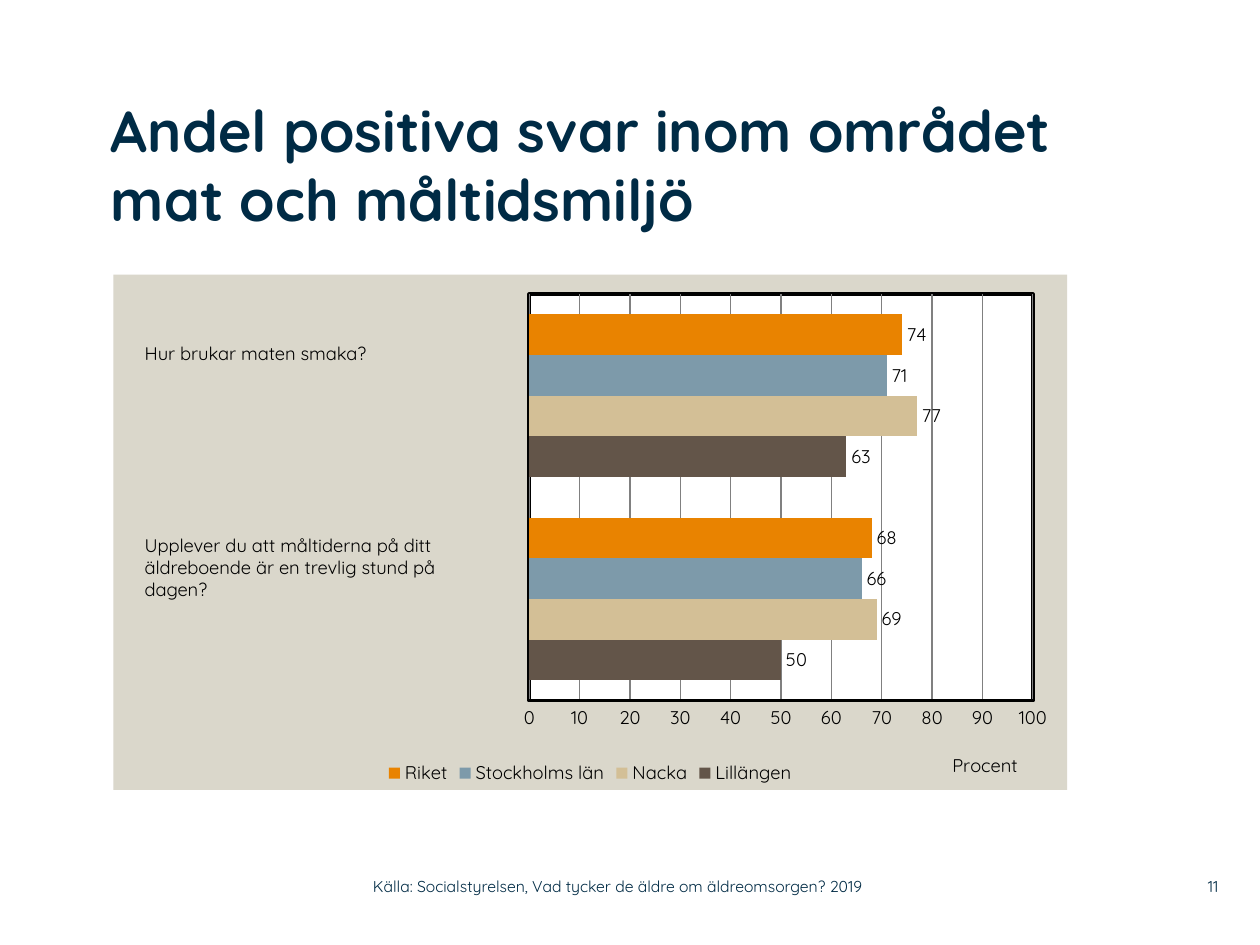
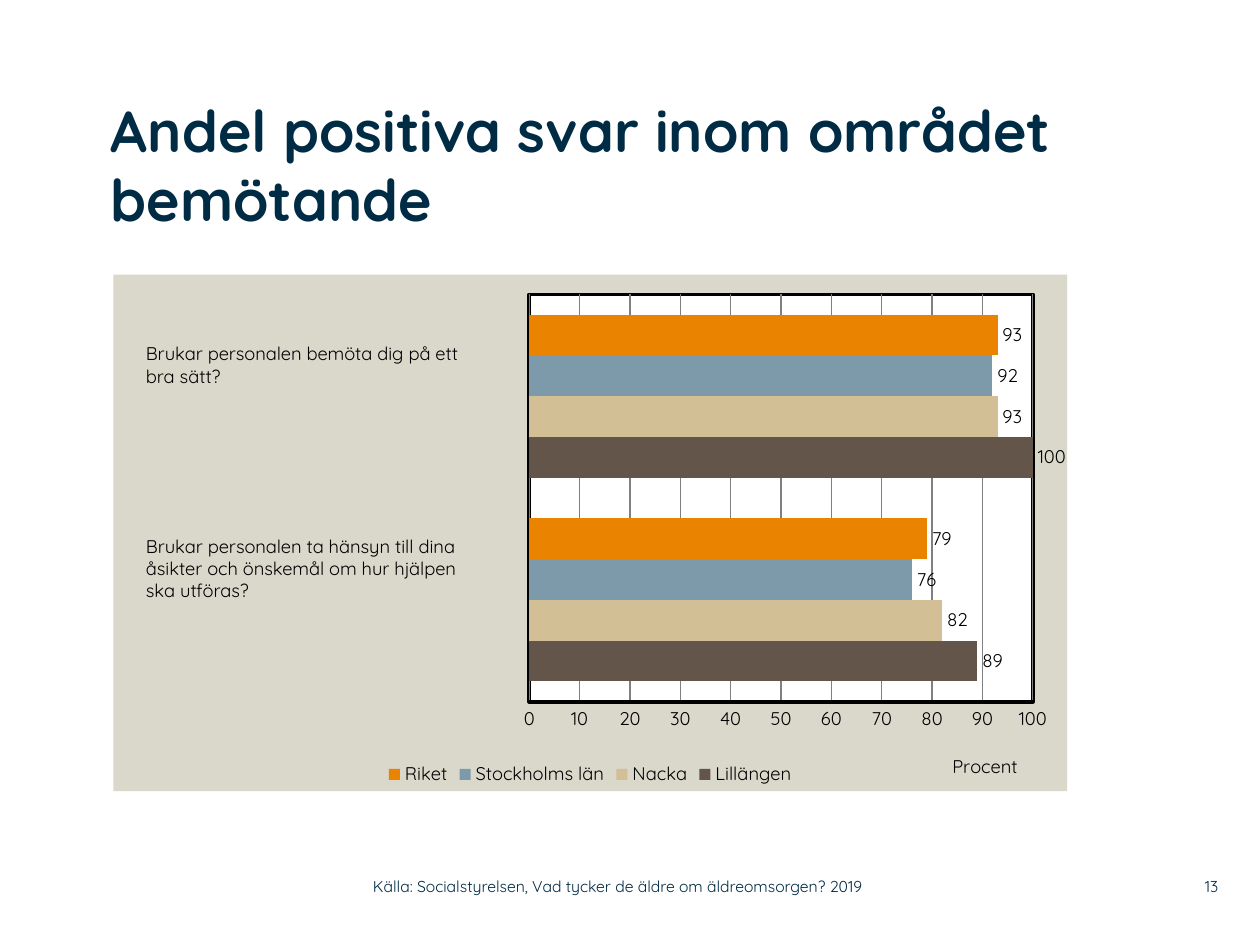
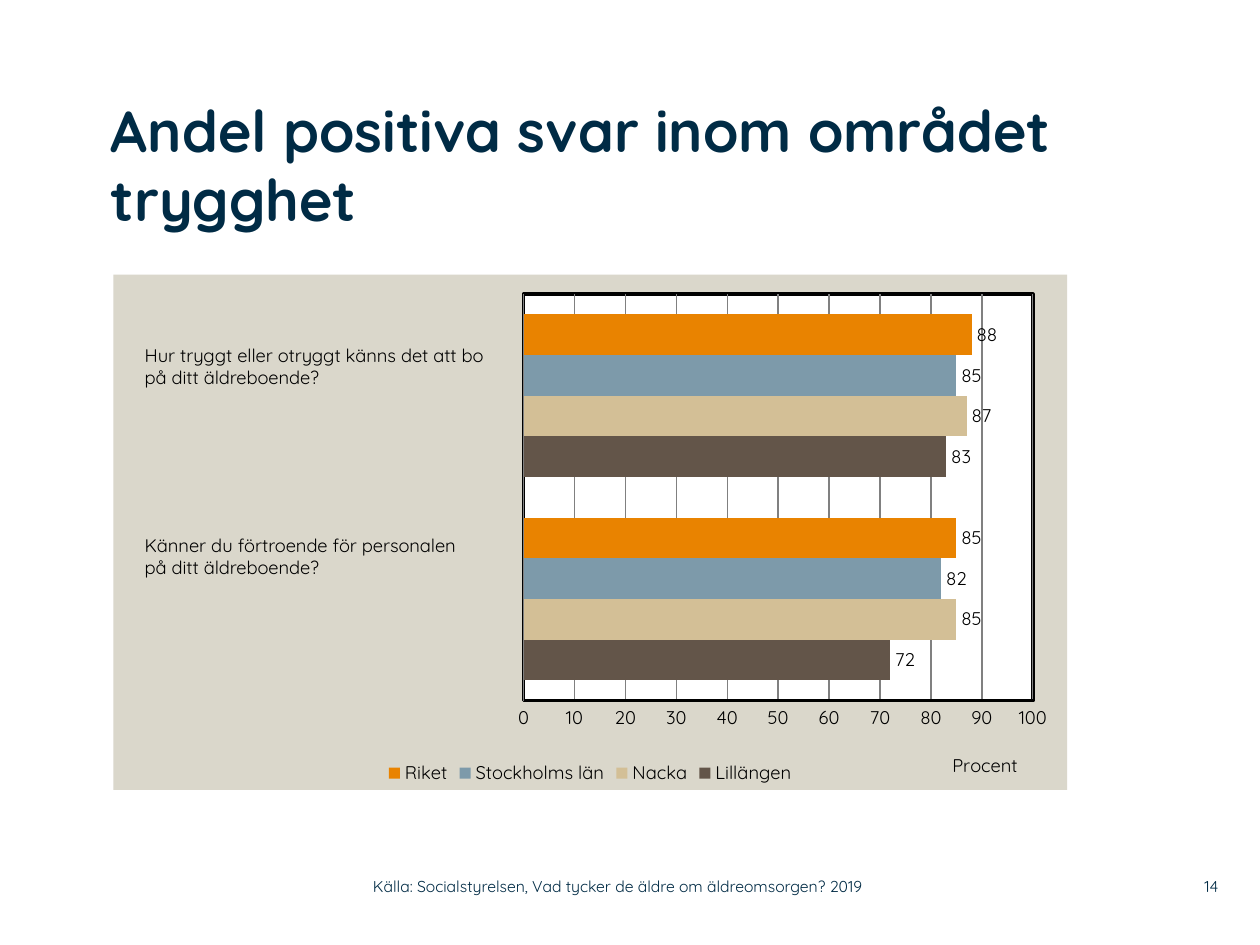
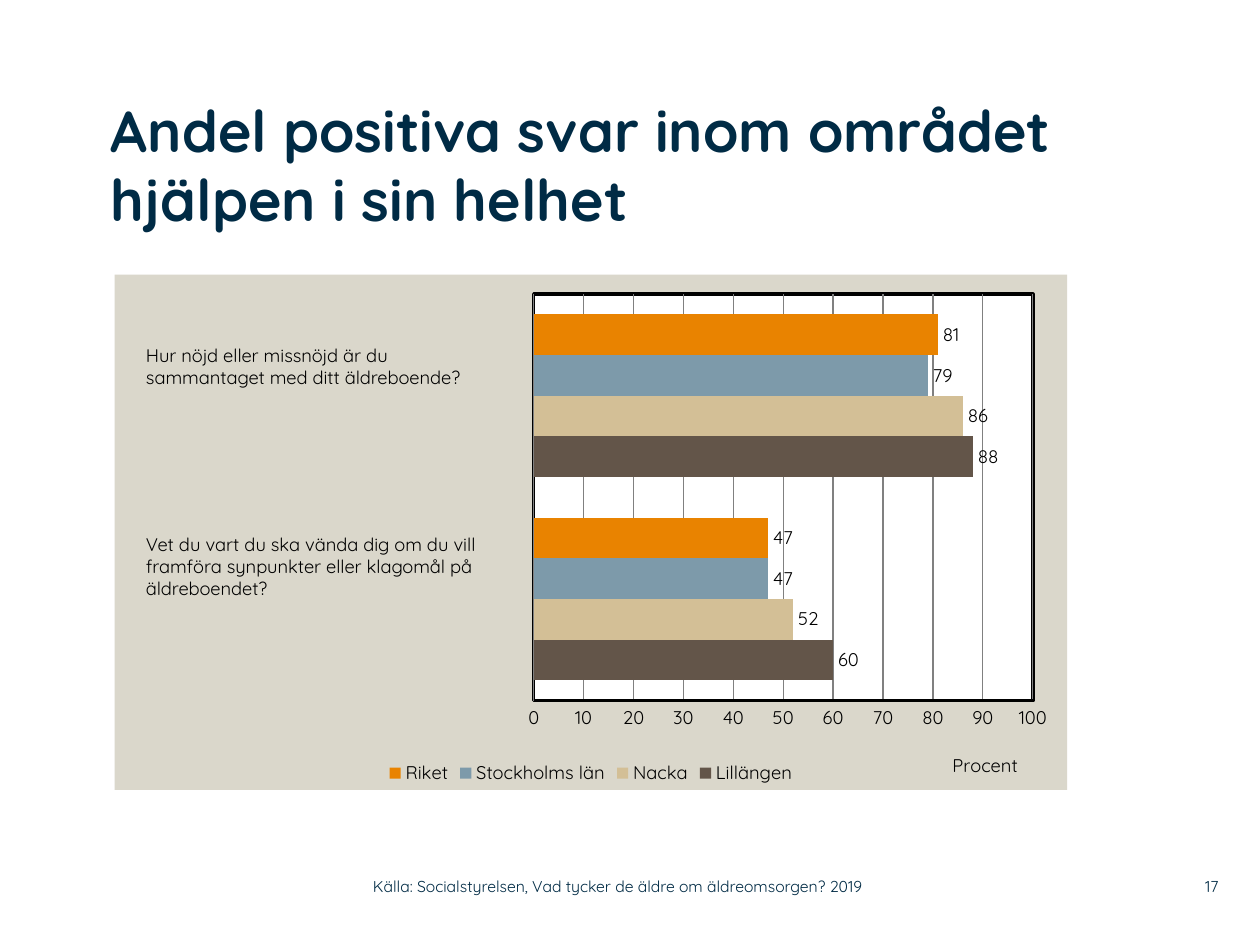
from dataclasses import dataclass

from lxml import etree
from pptx import Presentation
from pptx import util as u
from pptx.chart import data as chart_data
from pptx.dml import color
from pptx.enum import chart as charts
from pptx.enum import text
from pptx.oxml import ns

# Shared look
PX = 9144  # 100 px to the inch
FONT = "Quicksand"
NAVY, BLACK, WHITE, GREY, PANEL = "002B45", "000000", "FFFFFF", "808080", "DAD7CB"
SOURCE = "Källa: Socialstyrelsen, Vad tycker de äldre om äldreomsorgen? 2019"
TITLE_START = "Andel positiva svar inom området "
SERIES = {
    "Lillängen": "635549",
    "Nacka": "D3BF96",
    "Stockholms län": "7D9AAA",
    "Riket": "E98300",
}
TITLE_FONT = {"name": FONT, "size": u.Pt(33), "bold": True}
BODY_FONT = {"name": FONT, "size": u.Pt(10.5), "bold": False}
FOOTER_FONT = {"name": FONT, "size": u.Pt(9), "bold": False}
TITLE_FRAME = {"auto_size": text.MSO_AUTO_SIZE.NONE}
QUESTION_FRAME = {"auto_size": text.MSO_AUTO_SIZE.SHAPE_TO_FIT_TEXT}
FOOTER_FRAME = {"vertical_anchor": text.MSO_ANCHOR.MIDDLE}
NO_MARGINS = dict.fromkeys(
    ("margin_left", "margin_top", "margin_right", "margin_bottom"), 0)


@dataclass
class Area:
    left: int
    top: int
    width: int
    height: int

    def emu(self) -> list[int]:
        return [side * PX for side in (self.left, self.top, self.width, self.height)]


@dataclass
class Question:
    area: Area
    lines: list[str]


@dataclass
class Survey:
    subject: str
    number: int
    title_width: int
    chart_area: Area
    plot_left: float
    plot_width: float
    questions: list[Question]
    values: list[tuple[int, int]]  # one pair per series, lower group first


SURVEYS = [
    Survey("mat och måltidsmiljö", 11, 842, Area(90, 218, 757, 409), 0.436, 0.528,
           [Question(Area(105, 267, 297, 28), ["Hur brukar maten smaka?"]),
            Question(Area(105, 419, 293, 63), [
                "Upplever du att måltiderna på ditt äldreboende är en trevlig stund på",
                "dagen?"])],
           [(50, 63), (69, 77), (66, 71), (68, 74)]),
    Survey("bemötande", 13, 760, Area(90, 218, 757, 410), 0.436, 0.528,
           [Question(Area(106, 267, 297, 45), [
               "Brukar personalen bemöta dig på ett", "bra sätt?"]),
            Question(Area(106, 420, 299, 63), [
                "Brukar personalen ta hänsyn till dina",
                "åsikter och önskemål om hur hjälpen", "ska utföras?"])],
           [(89, 100), (82, 93), (76, 92), (79, 93)]),
    Survey("trygghet", 14, 760, Area(90, 218, 757, 409), 0.43, 0.534,
           [Question(Area(105, 268, 294, 45), [
               "Hur tryggt eller otryggt känns det att bo på ditt äldreboende?"]),
            Question(Area(105, 419, 293, 45), [
                "Känner du förtroende för personalen", "på ditt äldreboende?"])],
           [(72, 83), (85, 87), (82, 85), (85, 88)]),
    Survey("hjälpen i sin helhet", 17, 760, Area(91, 218, 756, 409), 0.44, 0.524,
           [Question(Area(106, 268, 298, 45), [
               "Hur nöjd eller missnöjd är du", "sammantaget med ditt äldreboende?"]),
            Question(Area(106, 418, 297, 63), [
                "Vet du vart du ska vända dig om du vill framföra synpunkter "
                "eller klagomål på äldreboendet?"])],
           [(60, 88), (52, 86), (47, 79), (47, 81)]),
]


# Formatting helpers
def rgb(value: str) -> color.RGBColor:
    return color.RGBColor.from_string(value)


def apply(target, values: dict) -> None:
    for name, value in values.items():
        setattr(target, name, value)


def style_font(font, values: dict, shade: str) -> None:
    apply(font, values)
    font.color.rgb = rgb(shade)


def add_text(page, area: Area, lines: list[str], font: dict, shade: str,
             frame: dict, align=text.PP_ALIGN.LEFT) -> None:
    box = page.shapes.add_textbox(*area.emu())
    box.text_frame.word_wrap = True
    apply(box.text_frame, frame)
    for index, line in enumerate(lines):
        para = (box.text_frame.add_paragraph() if index
                else box.text_frame.paragraphs[0])
        para.alignment = align
        span = para.add_run()
        span.text = line
        style_font(span.font, font, shade)


# Chart XML helpers
def set_layout(parent, index: int, values: dict) -> None:
    for old in parent.findall(ns.qn("c:layout")):
        parent.remove(old)
    layout = etree.Element(ns.qn("c:layout"))
    manual = etree.SubElement(layout, ns.qn("c:manualLayout"))
    for name, value in values.items():
        etree.SubElement(manual, ns.qn(f"c:{name}")).set("val", str(value))
    parent.insert(index, layout)


def area_format(fill: str, line: str = "", points: float = 0):
    props = etree.Element(ns.qn("c:spPr"))

    def add_solid(parent, shade: str) -> None:
        solid = etree.SubElement(parent, ns.qn("a:solidFill"))
        etree.SubElement(solid, ns.qn("a:srgbClr")).set("val", shade)

    add_solid(props, fill)
    edge = etree.SubElement(props, ns.qn("a:ln"))
    if line:
        edge.set("w", str(u.Pt(points)))
        add_solid(edge, line)
    else:
        etree.SubElement(edge, ns.qn("a:noFill"))
    return props


# Slide parts
def add_bars(page, survey: Survey) -> None:
    content = chart_data.CategoryChartData()
    content.categories = ["1", "2"]
    for name, values in zip(SERIES, survey.values):
        content.add_series(name, values)
    chart = page.shapes.add_chart(
        charts.XL_CHART_TYPE.BAR_CLUSTERED, *survey.chart_area.emu(), content).chart
    style_font(chart.font, BODY_FONT, BLACK)
    chart.has_title = False
    chart.has_legend = True
    apply(chart.legend, {"position": charts.XL_LEGEND_POSITION.BOTTOM,
                         "include_in_layout": False})
    style_font(chart.legend.font, BODY_FONT, BLACK)

    # Bars and their labels
    plot = chart.plots[0]
    apply(plot, {"gap_width": 100, "overlap": 0, "vary_by_categories": False})
    for series, shade in zip(plot.series, SERIES.values()):
        series.format.fill.solid()
        series.format.fill.fore_color.rgb = rgb(shade)
        labels = series.data_labels
        apply(labels, {"show_value": True,
                       "position": charts.XL_LABEL_POSITION.OUTSIDE_END})
        style_font(labels.font, BODY_FONT, BLACK)

    # Axes
    chart.category_axis.visible = False
    axis = chart.value_axis
    apply(axis, {"minimum_scale": 0, "maximum_scale": 100, "major_unit": 10,
                 "major_tick_mark": charts.XL_TICK_MARK.NONE,
                 "minor_tick_mark": charts.XL_TICK_MARK.NONE,
                 "has_major_gridlines": True})
    style_font(axis.tick_labels.font, BODY_FONT, BLACK)
    for line, shade, points in ((axis.format.line, BLACK, 2),
                                (axis.major_gridlines.format.line, GREY, 0.75)):
        line.color.rgb = rgb(shade)
        line.width = u.Pt(points)
    para = axis.axis_title.text_frame.paragraphs[0]
    span = para.add_run()
    span.text = "Procent"
    style_font(span.font, BODY_FONT, BLACK)
    title = axis.axis_title._element
    set_layout(title, 1, {"xMode": "edge", "yMode": "edge", "x": 0.876, "y": 0.92})

    # Panel and plot area
    space = chart._chartSpace
    space.chart.addnext(area_format(PANEL))
    plot_area = space.chart.plotArea
    set_layout(plot_area, 0, {
        "layoutTarget": "inner", "xMode": "edge", "yMode": "edge",
        "x": survey.plot_left, "y": 0.038, "w": survey.plot_width, "h": 0.789})
    plot_area.append(area_format(WHITE, BLACK, 2))


def add_page(deck, survey: Survey) -> None:
    page = deck.slides.add_slide(deck.slide_layouts[6])
    add_bars(page, survey)
    add_text(page, Area(88, 75, survey.title_width, 142),
             [TITLE_START + survey.subject], TITLE_FONT, NAVY, TITLE_FRAME | NO_MARGINS)
    for question in survey.questions:
        add_text(page, question.area, question.lines, BODY_FONT, BLACK, QUESTION_FRAME)
    footer = FOOTER_FRAME | NO_MARGINS
    add_text(page, Area(920, 689, 47, 29), [str(survey.number)], FOOTER_FONT, NAVY,
             footer, text.PP_ALIGN.RIGHT)
    add_text(page, Area(296, 689, 443, 29), [SOURCE], FOOTER_FONT, NAVY, footer)


def main() -> None:
    deck = Presentation()
    deck.slide_width, deck.slide_height = 1000 * PX, 750 * PX
    for survey in SURVEYS:
        add_page(deck, survey)
    deck.save("out.pptx")


if __name__ == "__main__":
    main()
